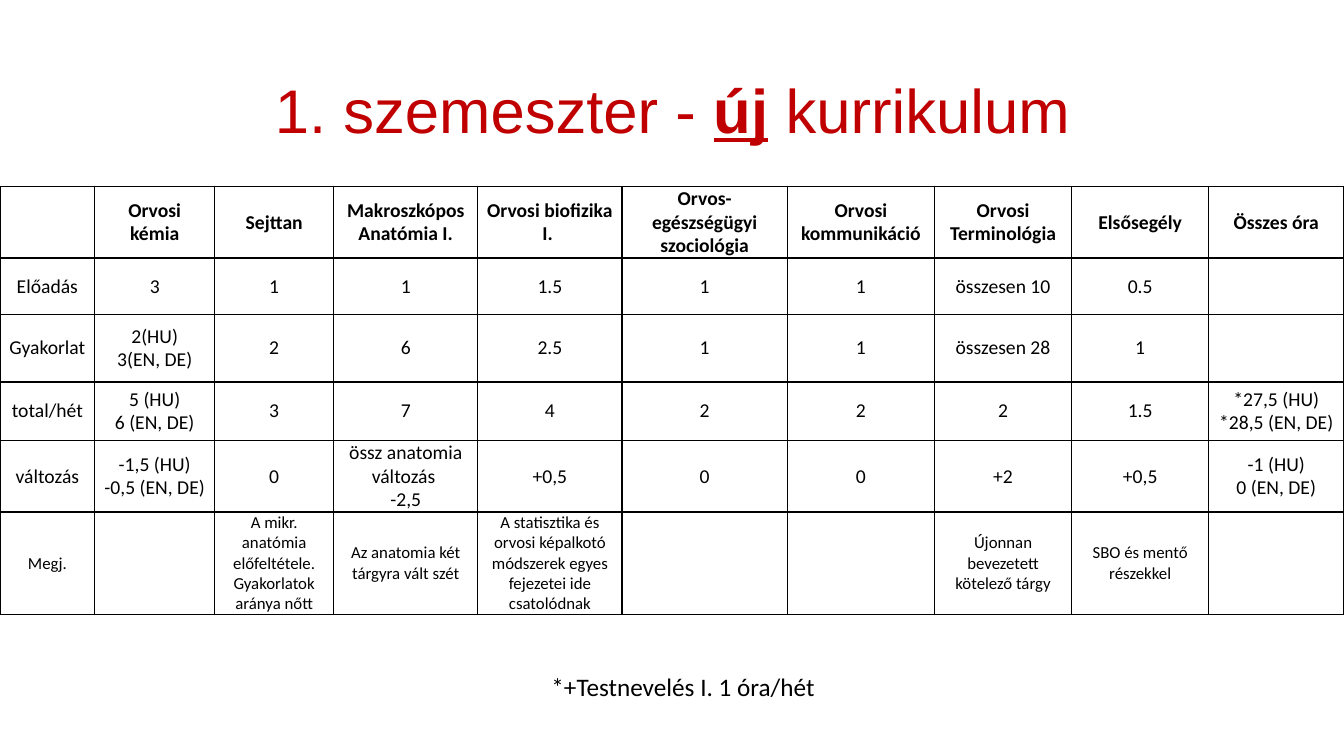
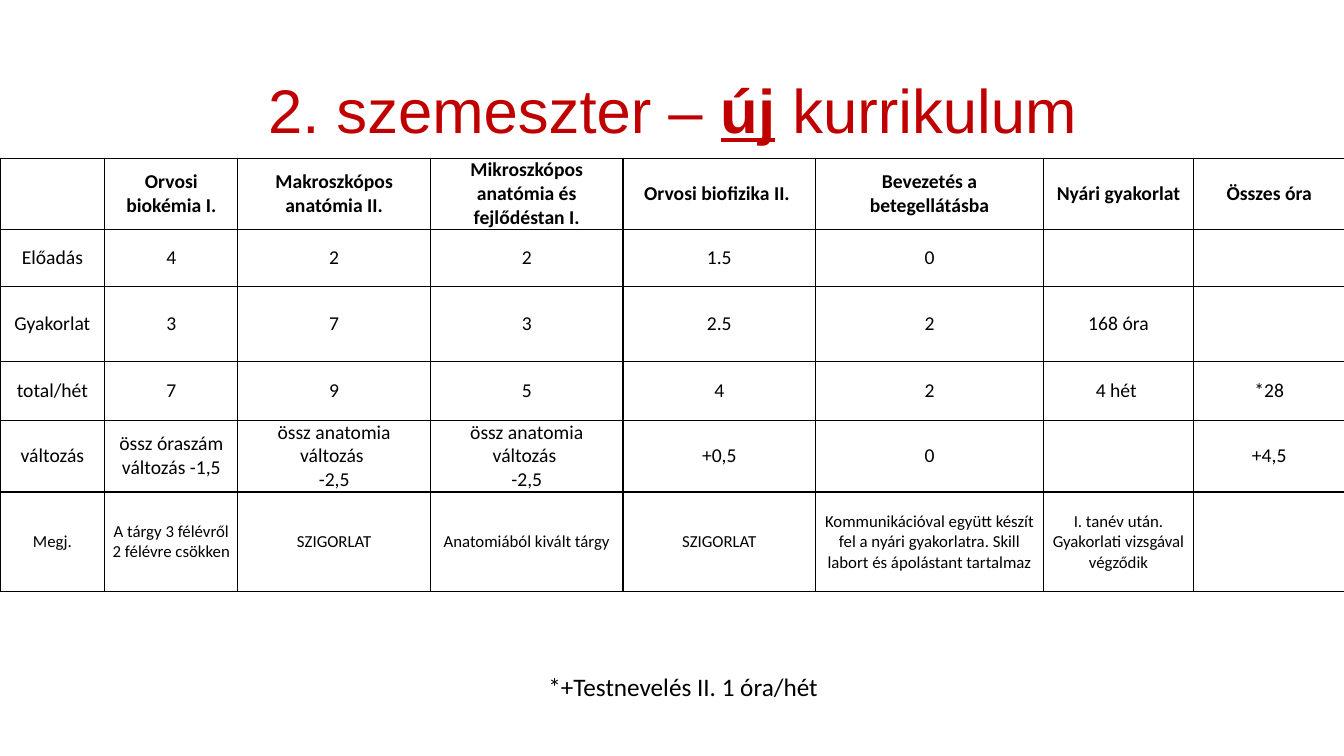
import lxml.etree
import pptx
import pptx.dml.color
import pptx.enum.text
import pptx.oxml.ns
import pptx.util

Inches = pptx.util.Inches
Pt = pptx.util.Pt
qn = pptx.oxml.ns.qn
MID = pptx.enum.text.MSO_ANCHOR.MIDDLE
MID_PARA = pptx.enum.text.PP_ALIGN.CENTER
FIT = pptx.enum.text.MSO_AUTO_SIZE

RED = "C00000"
BLACK = "000000"
HEAD = {"name": "Arial", "size": Pt(44), "bold": False, "underline": False}
MARK = {**HEAD, "bold": True, "underline": True}
BODY = {"name": "Calibri", "size": Pt(14), "bold": False}
TOP = {**BODY, "bold": True}
SMALL = {**BODY, "size": Pt(12)}
NOTE = {**BODY, "size": Pt(18)}
CELL = {
    "vertical_anchor": MID,
    "margin_left": Inches(0.07),
    "margin_right": Inches(0.07),
    "margin_top": 0,
    "margin_bottom": 0,
}
PLAIN = {"first_row": False, "horz_banding": False}

TITLE_BOX = (0.92, 0.4, 11.5, 1.45)
NOTE_BOX = (5.22, 6.61, 3.11, 0.4)

TERMS = [
    {
        "title": "1. szemeszter - ",
        "note": "*+Testnevelés I. 1 óra/hét",
        "box": (0, 1.85, 13.33, 4.2),
        "cols": [0.94, 1.19, 1.18, 1.43, 1.43, 1.64, 1.46, 1.36, 1.36, 1.34],
        "rows": [0.67, 0.56, 0.67, 0.58, 0.58, 0.98],
        "cells": [
            ["", "Orvosi kémia", "Sejttan", "Makroszkópos Anatómia I.",
             "Orvosi biofizika I. ", "Orvos-egészségügyi szociológia",
             "Orvosi kommunikáció", "Orvosi Terminológia", "Elsősegély",
             "Összes óra"],
            ["Előadás", "3", "1", "1", "1.5", "1", "1", "összesen 10",
             "0.5", ""],
            ["Gyakorlat", "2(HU)\n3(EN, DE)", "2", "6", "2.5", "1", "1",
             "összesen 28", "1", ""],
            ["total/hét", "5 (HU)\n6 (EN, DE)", "3", "7", "4", "2", "2",
             "2", "1.5", "*27,5 (HU)\n*28,5 (EN, DE)"],
            ["változás", "-1,5 (HU)\n-0,5 (EN, DE)", "0",
             "össz anatomia változás \n-2,5", "+0,5", "0", "0", "+2",
             "+0,5", "-1 (HU)\n0 (EN, DE)"],
            ["Megj.", "",
             "A mikr. anatómia előfeltétele. Gyakorlatok aránya nőtt",
             "Az anatomia két tárgyra vált szét",
             "A statisztika és orvosi képalkotó módszerek egyes fejezetei "
             "ide csatolódnak", "", "",
             "Újonnan bevezetett kötelező tárgy", "SBO és mentő részekkel",
             ""],
        ],
    },
    {
        "title": "2. szemeszter – ",
        "note": "*+Testnevelés II. 1 óra/hét",
        "box": (0, 1.57, 13.33, 4.29),
        "cols": [1.04, 1.32, 1.91, 1.91, 1.91, 2.26, 1.49, 1.5],
        "rows": [0.68, 0.56, 0.75, 0.58, 0.58, 0.99],
        "cells": [
            ["", "Orvosi biokémia I.", "Makroszkópos anatómia II.",
             "Mikroszkópos anatómia és fejlődéstan I.",
             "Orvosi biofizika II. ", "Bevezetés a betegellátásba",
             "Nyári gyakorlat", "Összes óra"],
            ["Előadás", "4", "2", "2", "1.5", "0", "", ""],
            ["Gyakorlat", "3", "7", "3", "2.5", "2", "168 óra", ""],
            ["total/hét", "7", "9", "5", "4", "2", "4 hét ", "*28"],
            ["változás", "össz óraszám változás -1,5",
             "össz anatomia változás \n-2,5",
             "össz anatomia változás \n-2,5", "+0,5", "0", "", "+4,5"],
            ["Megj.", "A tárgy 3 félévről 2 félévre csökken", "SZIGORLAT",
             "Anatomiából kivált tárgy", "SZIGORLAT",
             "Kommunikációval együtt készít fel a nyári gyakorlatra. "
             "Skill labort és ápolástant tartalmaz",
             "I. tanév után. Gyakorlati vizsgával végződik", ""],
        ],
    },
]


def apply(item, form):
    for key, val in form.items():
        setattr(item, key, val)


def paint(color, code):
    color.rgb = pptx.dml.color.RGBColor.from_string(code)


def add_run(para, text, form, code):
    run = para.add_run()
    run.text = text
    apply(run.font, form)
    paint(run.font.color, code)


def fill_text(frame, text, form):
    for i, line in enumerate(text.split("\n")):
        para = frame.add_paragraph() if i else frame.paragraphs[0]
        para.alignment = MID_PARA
        if line:
            add_run(para, line, form, BLACK)


def add_edges(cell):
    props = cell._tc.get_or_add_tcPr()
    for side in ("lnL", "lnR", "lnT", "lnB"):
        edge = lxml.etree.SubElement(props, qn("a:" + side), w=str(Pt(1)))
        solid = lxml.etree.SubElement(edge, qn("a:solidFill"))
        lxml.etree.SubElement(solid, qn("a:srgbClr"), val=BLACK)


def add_title(slide, box, lead):
    title = slide.shapes.title
    sides = ("left", "top", "width", "height")
    apply(title, dict(zip(sides, map(Inches, box))))
    frame = title.text_frame
    apply(frame, {"vertical_anchor": MID, "word_wrap": True,
                  "auto_size": FIT.NONE})
    para = frame.paragraphs[0]
    apply(para, {"alignment": MID_PARA, "line_spacing": 0.9})
    for text, form in ((lead, HEAD), ("új", MARK), (" kurrikulum", HEAD)):
        add_run(para, text, form, RED)


def add_grid(slide, box, term):
    cells, cols, rows = term["cells"], term["cols"], term["rows"]
    grid = slide.shapes.add_table(
        len(rows), len(cols), *map(Inches, box)).table
    apply(grid, PLAIN)
    for col, width in zip(grid.columns, cols):
        col.width = Inches(width)
    forms = [TOP] + [BODY] * (len(rows) - 2) + [SMALL]
    for r, (height, form) in enumerate(zip(rows, forms)):
        grid.rows[r].height = Inches(height)
        for c, text in enumerate(cells[r]):
            cell = grid.cell(r, c)
            apply(cell, CELL)
            add_edges(cell)
            cell.fill.background()
            fill_text(cell.text_frame, text, form)


def add_note(slide, box, text):
    frame = slide.shapes.add_textbox(*map(Inches, box)).text_frame
    apply(frame, {"word_wrap": True, "auto_size": FIT.SHAPE_TO_FIT_TEXT})
    fill_text(frame, text, NOTE)


def add_term(deck, term):
    slide = deck.slides.add_slide(deck.slide_layouts[5])
    add_title(slide, TITLE_BOX, term["title"])
    add_grid(slide, term["box"], term)
    add_note(slide, NOTE_BOX, term["note"])


def main():
    deck = pptx.Presentation()
    apply(deck, {"slide_width": Inches(13.33), "slide_height": Inches(7.5)})
    for term in TERMS:
        add_term(deck, term)
    deck.save("out.pptx")


if __name__ == "__main__":
    main()
